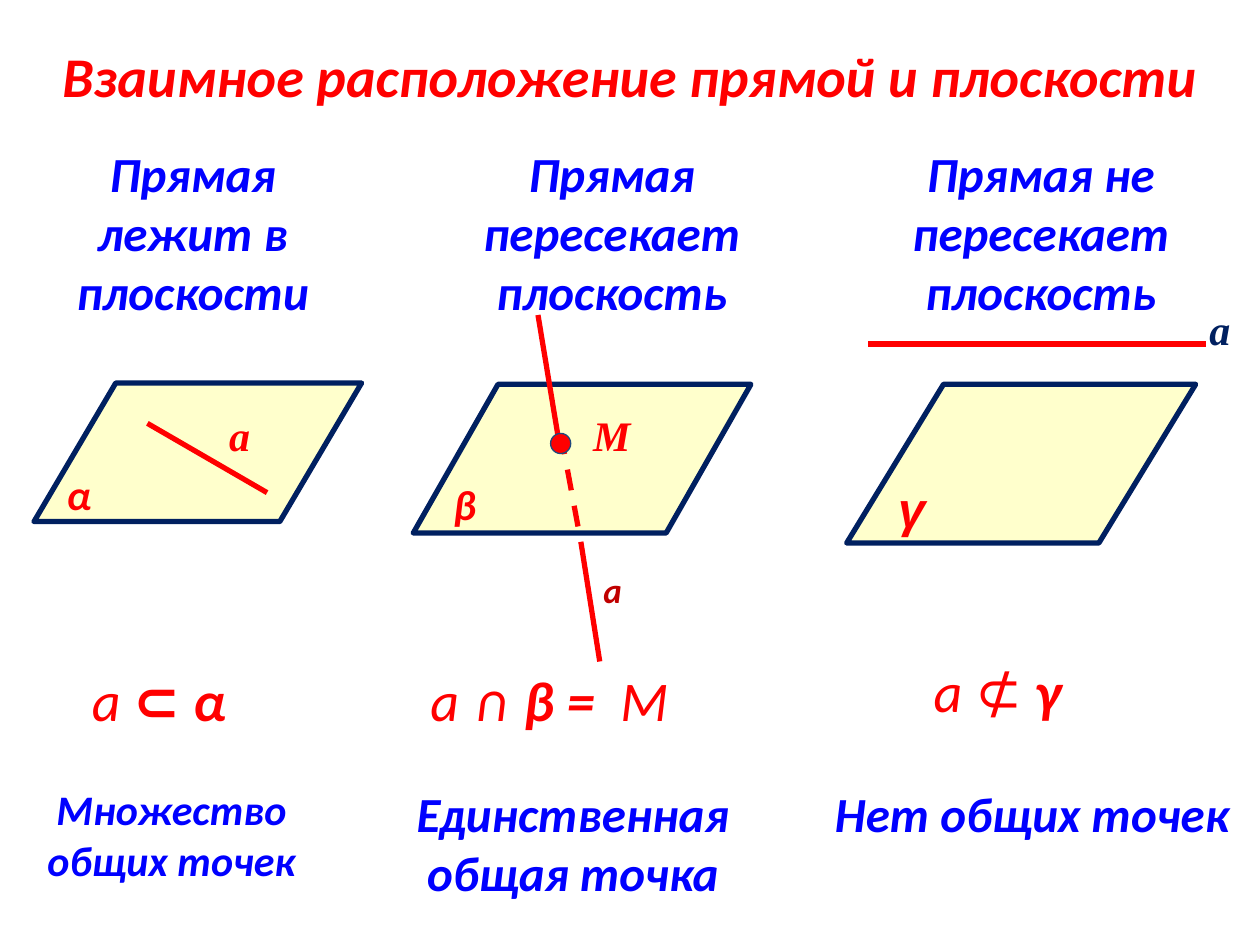
from dataclasses import dataclass

from pptx import Presentation
from pptx.dml.color import RGBColor
from pptx.enum.dml import MSO_LINE
from pptx.enum.shapes import MSO_CONNECTOR, MSO_SHAPE
from pptx.enum.text import MSO_ANCHOR, MSO_AUTO_SIZE, PP_ALIGN as Align
from pptx.oxml.ns import qn
from pptx.util import Pt
from lxml.etree import SubElement

SCALE = 9144  # EMU per px, 100 px to the inch


@dataclass(frozen=True)
class Theme:
    red: str = "FF0000"
    dark_red: str = "C00000"
    blue: str = "0000FF"
    navy: str = "002060"
    plane: str = "FFFFCC"
    point_edge: str = "1F497D"
    font: str = "Calibri"
    serif: str = "Times New Roman"
    sans: str = "Arial"
    title: int = 32
    heading: int = 28
    label: int = 24
    small: int = 20
    stroke: float = 3


THEME = Theme()


def px(*lengths):
    return [round(length * SCALE) for length in lengths]


def color(value):
    return RGBColor.from_string(value)


def write(shape, runs, ink, align=Align.LEFT, font=THEME.font):
    """Fill a text shape; each run is (text, size, bold, italic)."""
    frame = shape.text_frame
    frame.word_wrap = True
    frame.auto_size = MSO_AUTO_SIZE.NONE
    frame.vertical_anchor = MSO_ANCHOR.TOP
    paragraph = frame.paragraphs[0]
    paragraph.alignment = align
    for text, size, bold, italic in runs:
        run = paragraph.add_run()
        run.text = text
        run.font.name = font
        run.font.size = Pt(size)
        run.font.bold, run.font.italic = bold, italic
        run.font.color.rgb = color(ink)


def add_text(slide, box, runs, ink, **style):
    write(slide.shapes.add_textbox(*px(*box)), runs, ink, **style)


def add_label(slide, box, text, size=THEME.label, ink=THEME.red, font=THEME.font):
    add_text(slide, box, [(text, size, True, True)], ink, font=font)


def add_line(slide, start, end, dashed=False):
    line = slide.shapes.add_connector(MSO_CONNECTOR.STRAIGHT, *px(*start, *end))
    line.line.color.rgb = color(THEME.red)
    line.line.width = Pt(THEME.stroke)
    if dashed:
        line.line.dash_style = MSO_LINE.DASH
    SubElement(line._element.spPr, qn("a:effectLst"))


def add_figure(slide, kind, box, fill, edge, width):
    shape = slide.shapes.add_shape(kind, *px(*box))
    shape.shadow.inherit = False
    shape.fill.solid()
    shape.fill.fore_color.rgb = color(fill)
    shape.line.color.rgb = color(edge)
    shape.line.width = Pt(width)
    return shape


def add_plane(slide, box, slant):
    plane = add_figure(slide, MSO_SHAPE.PARALLELOGRAM, box,
                       THEME.plane, THEME.navy, THEME.stroke)
    plane.adjustments[0] = slant


def add_title(slide, box):
    title = slide.shapes.title
    title.left, title.top, title.width, title.height = px(*box)
    write(title, [("Взаимное расположение прямой и плоскости", THEME.title, True, True)],
          THEME.red, Align.CENTER)


def add_captions(slide, heading_box, heading, formula_box, formula, result_box, result):
    """Heading above, notation below and conclusion at the foot of one case."""
    add_text(slide, heading_box, [(heading, THEME.heading, True, True)],
             THEME.blue, align=Align.CENTER)
    add_text(slide, formula_box, [(text, THEME.title, bold, italic) for text, bold, italic in formula],
             THEME.red, align=Align.CENTER)
    add_text(slide, result_box, [(text, size, True, True) for text, size in result],
             THEME.blue, align=Align.CENTER)


def add_line_in_plane(slide, left, top):
    add_plane(slide, (left, top, 260, 110), 0.59)
    add_line(slide, (left + 90, top + 32), (left + 185, top + 87))
    add_label(slide, (left + 16, top + 63, 35, 50), "α")
    add_label(slide, (left + 145, top + 16, 55, 51), "а", font=THEME.serif)


def add_line_through_plane(slide, left, top):
    add_plane(slide, (left, top, 268, 118), 0.57)
    add_label(slide, (left + 22, top + 70, 48, 50), "β")
    # The line: above the plane, hidden behind it, below it
    add_line(slide, (left + 99, top - 55), (left + 117, top + 54))
    add_line(slide, (left + 117, top + 39), (left + 133, top + 125), dashed=True)
    add_line(slide, (left + 133, top + 125), (left + 148, top + 220))
    # Point of intersection
    add_figure(slide, MSO_SHAPE.OVAL, (left + 109, top + 39, 16, 16),
               THEME.red, THEME.point_edge, 0.75)
    add_label(slide, (left + 141, top + 141, 63, 44), "а", THEME.small, THEME.dark_red)
    add_label(slide, (left + 133, top + 15, 63, 51), "М", font=THEME.serif)


def add_line_above_plane(slide, left, top):
    add_plane(slide, (left, top, 277, 126), 0.61)
    add_label(slide, (left + 31, top + 70, 61, 57), "γ", THEME.heading, font=THEME.sans)
    add_line(slide, (left + 17, top - 32), (left + 285, top - 32))
    add_label(slide, (left + 278, top - 69, 55, 51), "а", ink=THEME.navy, font=THEME.serif)


def main():
    presentation = Presentation()
    presentation.slide_width, presentation.slide_height = px(1000, 750)
    slide = presentation.slides.add_slide(presentation.slide_layouts[5])
    add_title(slide, (0, 28, 1000, 64))

    # Line lies in the plane
    add_captions(slide, (31, 109, 244, 151), "Прямая лежит в плоскости",
                 (0, 523, 252, 63),
                 [("а ", False, True), ("⊂ ", True, False), ("α", True, True)],
                 (0, 617, 272, 91), [("Множество общих точек", THEME.label)])
    add_line_in_plane(slide, 27, 304)

    # Line crosses the plane
    add_captions(slide, (312, 109, 347, 151), "Прямая пересекает плоскость",
                 (314, 523, 244, 63),
                 [("а ", False, True), ("∩ β =  ", True, True), ("М", False, True)],
                 (305, 617, 299, 104),
                 [("Единственная", THEME.heading), (" ", THEME.label),
                  ("общая точка", THEME.heading)])
    add_line_through_plane(slide, 328, 305)

    # Line does not meet the plane
    add_captions(slide, (680, 109, 292, 151), "Прямая не пересекает плоскость",
                 (638, 516, 307, 63),
                 [("а ", False, True), ("⊄ ", False, False), ("γ", True, True)],
                 (638, 617, 362, 57), [("Нет общих точек", THEME.heading)])
    add_line_above_plane(slide, 672, 305)

    presentation.save("out.pptx")


if __name__ == "__main__":
    main()
